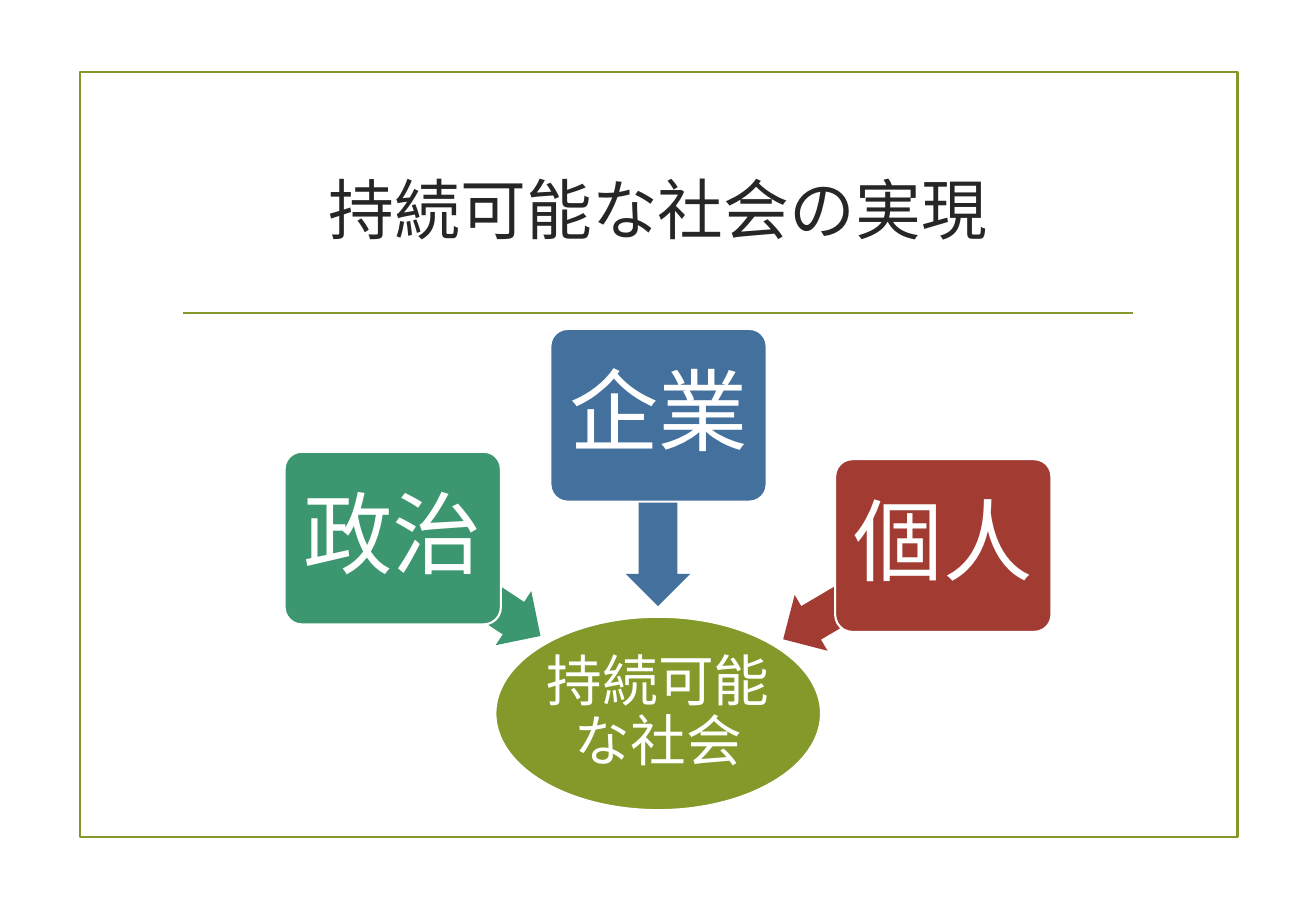
from dataclasses import dataclass

from lxml.etree import SubElement
from pptx import Presentation
from pptx.dml.color import RGBColor
from pptx.enum.shapes import MSO_CONNECTOR, MSO_SHAPE
from pptx.enum.text import MSO_ANCHOR, PP_ALIGN
from pptx.oxml.ns import qn
from pptx.util import Pt


@dataclass(frozen=True)
class Theme:
    font: str = "Times New Roman"
    olive: str = "83992A"
    green: str = "3C9770"
    blue: str = "44709D"
    red: str = "A23C33"
    white: str = "FFFFFF"
    ink: str = "262626"
    title_size: float = 39
    goal_size: float = 33
    actor_size: float = 53
    line_width: float = 1.25


theme = Theme()


def add_block(kind, bounds, fill=None, line=None):
    block = slide.shapes.add_shape(kind, *[Pt(length) for length in bounds])
    block.shadow.inherit = False
    if fill:
        block.fill.solid()
        block.fill.fore_color.rgb = RGBColor.from_string(fill)
    else:
        block.fill.background()
    if line:
        block.line.color.rgb = RGBColor.from_string(line)
        block.line.width = Pt(theme.line_width)
    else:
        block.line.fill.background()
    return block


def write_text(shape, text, size, color, inset, spacing):
    frame = shape.text_frame
    frame.word_wrap = True
    frame.vertical_anchor = MSO_ANCHOR.MIDDLE
    frame.margin_left = frame.margin_right = Pt(inset)
    frame.margin_top = frame.margin_bottom = Pt(inset)
    para = frame.paragraphs[0]
    para.alignment = PP_ALIGN.CENTER
    para.line_spacing = spacing
    span = para.add_run()
    span.text = text
    span.font.name = theme.font
    span.font.size = Pt(size)
    span.font.color.rgb = RGBColor.from_string(color)


deck = Presentation()
deck.slide_width, deck.slide_height = Pt(780), Pt(540)
slide = deck.slides.add_slide(deck.slide_layouts[5])

# Frame and rule under the title
add_block(MSO_SHAPE.RECTANGLE, (47.5, 42.5, 686, 453.5), line=theme.olive)
rule = slide.shapes.add_connector(
    MSO_CONNECTOR.STRAIGHT, Pt(108.7), Pt(185.6), Pt(671.8), Pt(185.6))
rule.line.color.rgb = RGBColor.from_string(theme.olive)
rule.line.width = Pt(theme.line_width)
SubElement(rule._element.spPr, qn("a:effectLst"))

# Title
title = slide.shapes.title
title.left, title.top, title.width, title.height = Pt(100), Pt(72), Pt(580), Pt(103)
write_text(title, "持続可能な社会の実現", theme.title_size, theme.ink, 4, 1)

# Shared goal
goal = add_block(MSO_SHAPE.OVAL, (293.6, 365.6, 193, 114.6), theme.olive, theme.white)
write_text(goal, "持続可能な社会", theme.goal_size, theme.white, 1.5, 0.9)

# Actors, each with an arrow towards the goal:
# name, colour, box left and top, arrow centre, arrow length, rotation
actors = [
    ("政治", theme.green, 168.7, 267.8, 276.5, 348.1, 105, 213.4),
    ("企業", theme.blue, 326.2, 195, 390, 302.8, 113, 270),
    ("個人", theme.red, 495, 272.2, 511.6, 351, 110, 329.5),
]
box_width, box_height, arrow_height = 128.2, 102.4, 38.4
for name, color, left, top, center_x, center_y, length, rotation in actors:
    arrow = add_block(
        MSO_SHAPE.LEFT_ARROW,
        (center_x - length / 2, center_y - arrow_height / 2, length, arrow_height),
        color)
    arrow.adjustments[0], arrow.adjustments[1] = 0.6, 0.5
    arrow.rotation = rotation
    box = add_block(
        MSO_SHAPE.ROUNDED_RECTANGLE, (left, top, box_width, box_height),
        color, theme.white)
    box.adjustments[0] = 0.1
    write_text(box, name, theme.actor_size, theme.white, 7, 0.9)

deck.save("out.pptx")
